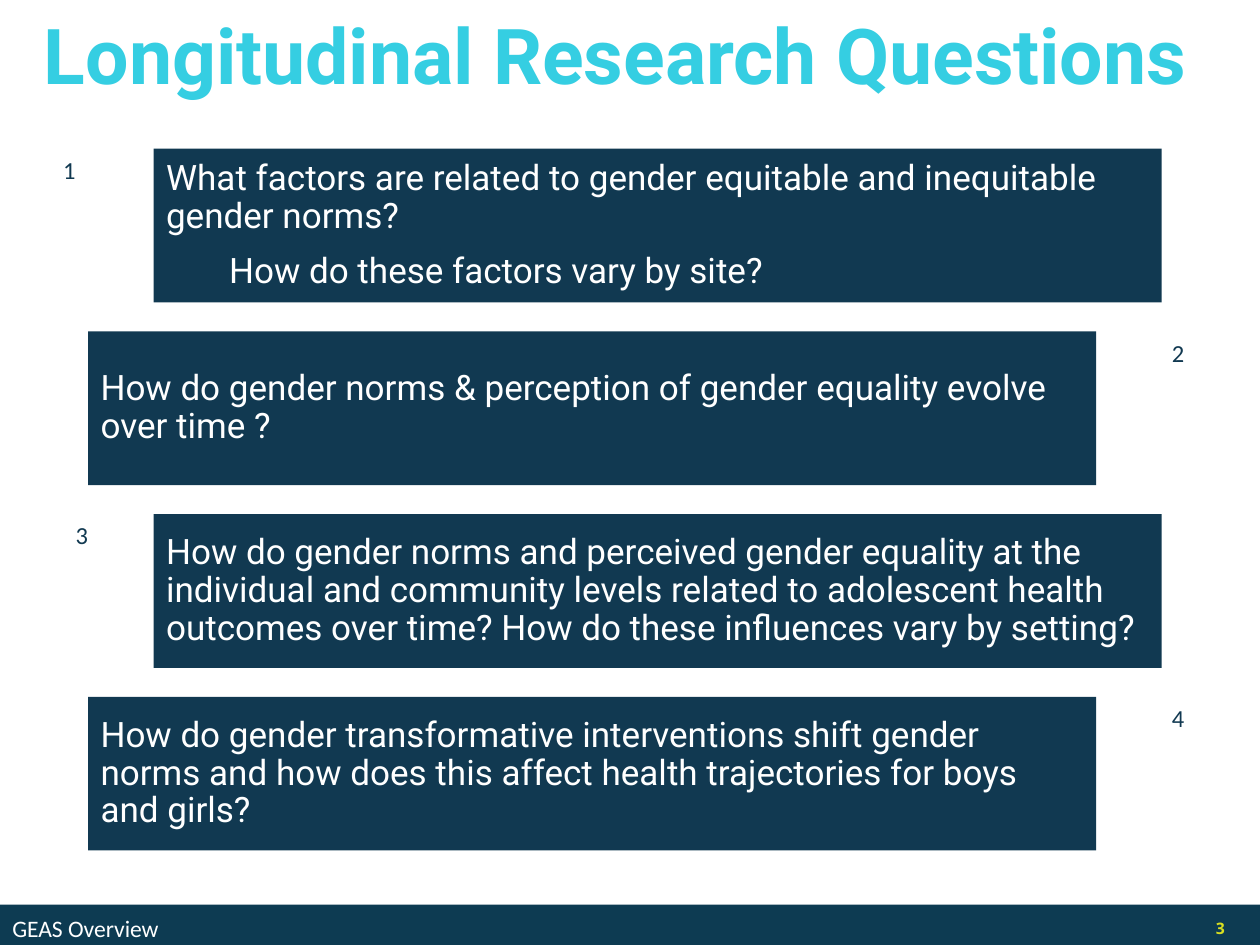
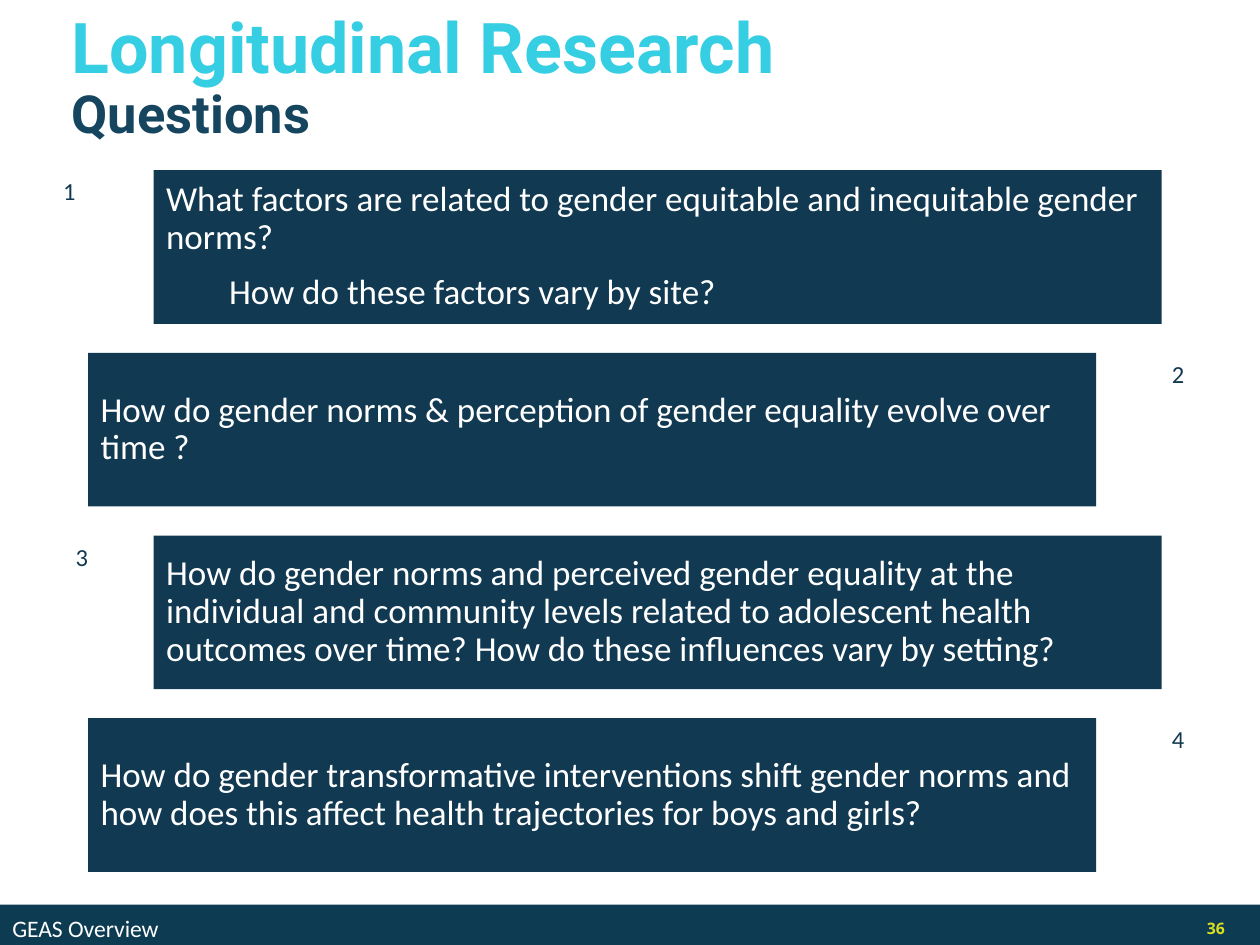
from pptx import Presentation
from pptx.dml.color import RGBColor
from pptx.enum import shapes, text
from pptx.util import Inches, Pt

COLORS = {"panel": "113951", "band": "0D3B52", "title": "35CEE2",
          "subtitle": "15455F", "page": "D9E021", "white": "FFFFFF"}
COLUMNS, ROWS = 100, 75
PANEL_WIDTH, PANEL_HEIGHT, PANEL_STEP = 80, 12.2, 14.5

QUESTIONS = [
    ["What factors are related to gender equitable and inequitable gender norms?",
     "How do these factors vary by site?"],
    ["How do gender norms & perception of gender equality evolve over time ?"],
    ["How do gender norms and perceived gender equality at the individual and "
     "community levels related to adolescent health outcomes over time? "
     "How do these influences vary by setting?"],
    ["How do gender transformative interventions shift gender norms and how does "
     "this affect health trajectories for boys and girls?"],
]
# Left column and width of each question's number
NUMBER_PLACES = [(2.5, 6), (89.5, 8), (2.5, 8), (89.2, 8.6)]


class QuestionDeck:
    """Holds the shared style and the page being drawn."""

    def __init__(self):
        self.deck = Presentation()
        self.deck.slide_width, self.deck.slide_height = Inches(10), Inches(7.5)
        self.page = None

    def place(self, left, top, width, height):
        column = self.deck.slide_width / COLUMNS
        row = self.deck.slide_height / ROWS
        return (round(left * column), round(top * row),
                round(width * column), round(height * row))

    def new_page(self):
        self.page = self.deck.slides.add_slide(self.deck.slide_layouts[6])

    def frame(self, box, anchor=text.MSO_ANCHOR.MIDDLE, inset=0.05):
        frame = box.text_frame
        frame.word_wrap = True
        frame.vertical_anchor = anchor
        frame.margin_left = frame.margin_right = Inches(0.1)
        frame.margin_top = frame.margin_bottom = Inches(inset)
        return frame

    def text_box(self, *cells, **options):
        return self.frame(self.page.shapes.add_textbox(*self.place(*cells)), **options)

    def bar(self, color, *cells, **options):
        box = self.page.shapes.add_shape(shapes.MSO_SHAPE.RECTANGLE, *self.place(*cells))
        box.shadow.inherit = False
        box.fill.solid()
        box.fill.fore_color.rgb = RGBColor.from_string(COLORS[color])
        box.line.fill.background()
        return self.frame(box, **options)

    def add_para(self, frame, words, size, font, color, bold=False,
                 align=text.PP_ALIGN.LEFT, spacing=1.0, before=0, after=0):
        first = frame.paragraphs[0]
        para = frame.add_paragraph() if first.runs else first
        para.alignment, para.line_spacing = align, spacing
        para.space_before, para.space_after = Pt(before), Pt(after)
        span = para.add_run()
        span.text = words
        span.font.size, span.font.name, span.font.bold = Pt(size), font, bold
        span.font.color.rgb = RGBColor.from_string(COLORS[color])
        return para

    def title(self, lines, *cells):
        frame = self.text_box(*cells)
        for words, size, color in lines:
            self.add_para(frame, words, size, "Roboto", color, bold=True, spacing=0.9)

    def footer(self, number):
        band = self.bar("band", 0, 71.8, COLUMNS, 3.7)
        self.add_para(band, "GEAS Overview", 13.5, "Calibri", "white")
        corner = self.text_box(91.6, 72.2, 6.6, 3)
        self.add_para(corner, number, 9, "Open Sans", "page", bold=True,
                      align=text.PP_ALIGN.RIGHT)

    def question(self, lines, left, top, font):
        frame = self.bar("panel", left, top, PANEL_WIDTH, PANEL_HEIGHT, inset=0.1)
        style = dict(size=20, font=font, color="white", spacing=0.9)
        if len(lines) == 1:
            self.add_para(frame, lines[0], before=7.5, after=10, **style)
            return
        self.add_para(frame, lines[0], **style)
        for words in lines[1:]:
            para = self.add_para(frame, words, before=10, after=10, **style)
            para._p.get_or_add_pPr().set("indent", str(Inches(0.5)))

    def number(self, label, left, top, width):
        frame = self.text_box(left, top, width, PANEL_HEIGHT,
                              anchor=text.MSO_ANCHOR.TOP)
        self.add_para(frame, label, 14, "Calibri", "panel", align=text.PP_ALIGN.CENTER)

    def questions(self, top, font):
        # Panels alternate sides, with the numbers in the free margin
        for index, (lines, (column, width)) in enumerate(zip(QUESTIONS, NUMBER_PLACES)):
            row = top + index * PANEL_STEP
            self.question(lines, 7 if index % 2 else 12.2, row, font)
            self.number(str(index + 1), column, row, width)


def main():
    show = QuestionDeck()

    # One-line title
    show.new_page()
    show.title([("Longitudinal Research Questions", 44, "title")], 2.5, 1, 96.2, 7.5)
    show.questions(11.8, "Roboto")
    show.footer("3")

    # Two-line title
    show.new_page()
    show.title([("Longitudinal Research", 40, "title"),
                ("Questions", 30, "subtitle")], 4.7, 2.5, 90, 7.5)
    show.questions(13.5, "Calibri")
    show.footer("36")

    show.deck.save("out.pptx")


if __name__ == "__main__":
    main()
